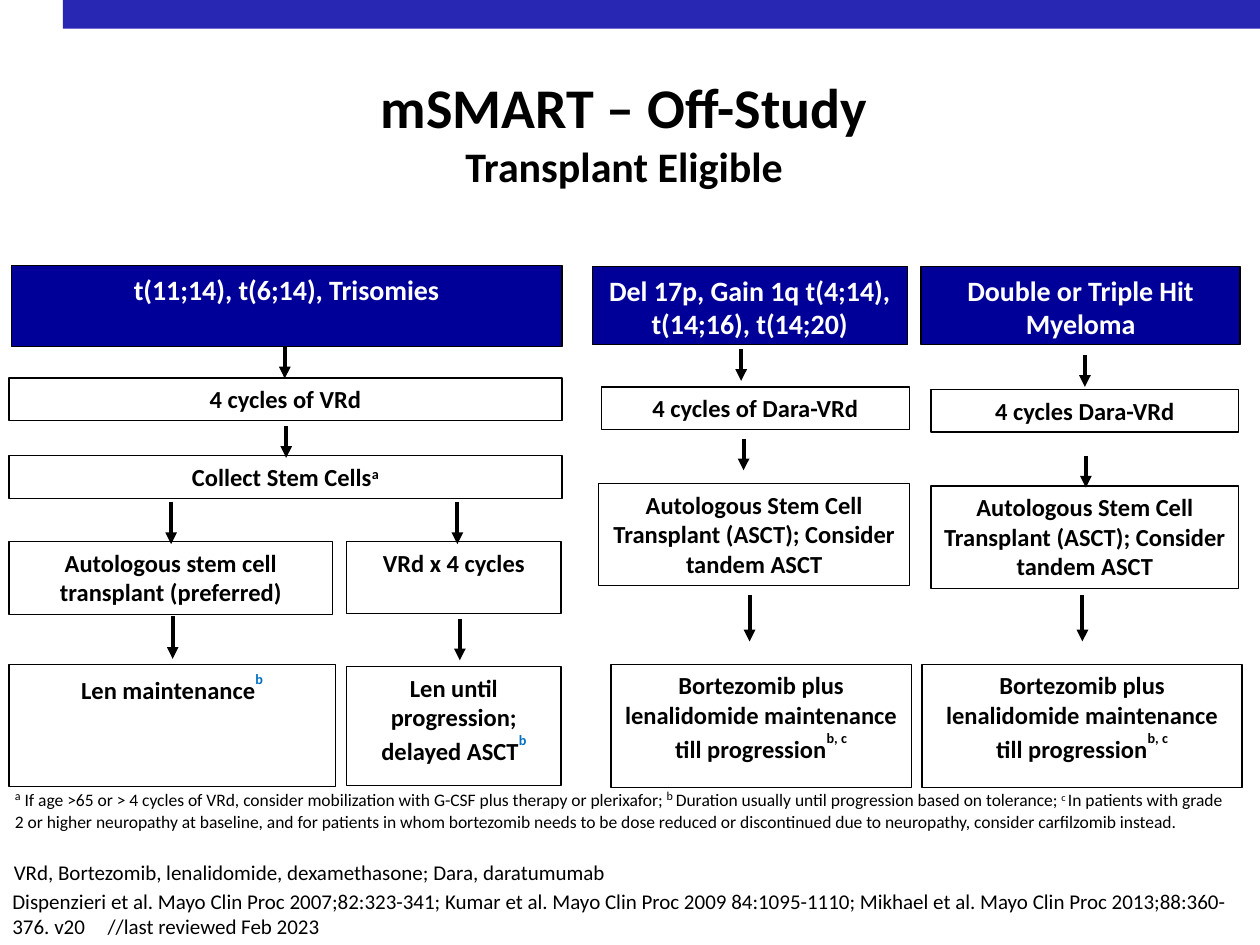
from dataclasses import dataclass
from typing import NamedTuple, Optional

from lxml.etree import SubElement
from pptx import Presentation
from pptx.dml.color import RGBColor
from pptx.enum.shapes import MSO_CONNECTOR, MSO_SHAPE
from pptx.enum.text import MSO_ANCHOR, MSO_AUTO_SIZE, PP_ALIGN
from pptx.oxml.ns import qn
from pptx.util import Cm, Pt

COLORS = {"bar": "2727B3", "header": "000099", "white": "FFFFFF",
          "black": "000000", "note": "0070C0"}


class Run(NamedTuple):
    text: str
    size: Optional[int] = None
    rise: int = 0  # superscript, percent
    color: Optional[str] = None


@dataclass
class Box:
    x: float
    y: float
    w: float
    h: float
    runs: list
    header: bool = False


class Arrow(NamedTuple):
    x: float
    y: float
    length: float


class Note(NamedTuple):
    x: float
    y: float
    w: float
    h: float
    runs: list
    spacing: float = 1.0


ASCT = [Run("Autologous Stem Cell Transplant (ASCT); Consider tandem ASCT")]
MAINTENANCE = [Run("Bortezomib plus lenalidomide maintenance till progression"),
               Run("b, c", rise=60)]
NOTE_B = Run("b", rise=60, color="note")

BOXES = [
    # standard risk
    Box(0.23, 5.36, 11.1, 1.63, [Run("t(11;14), t(6;14), Trisomies")], True),
    Box(0.18, 7.62, 11.15, 0.86, [Run("4 cycles of VRd")]),
    Box(0.18, 9.19, 11.15, 0.86, [Run("Collect Stem Cells"), Run("a", rise=30)]),
    Box(0.18, 10.92, 6.53, 1.47, [Run("Autologous stem cell transplant (preferred)")]),
    Box(6.99, 10.92, 4.32, 1.45, [Run("VRd x 4 cycles")]),
    Box(0.18, 13.39, 6.58, 2.46, [Run("Len maintenance"), NOTE_B]),
    Box(6.99, 13.44, 4.32, 2.39, [Run("Len until progression; delayed ASCT"), NOTE_B]),
    # high risk
    Box(11.94, 5.38, 6.35, 1.57,
        [Run("Del 17p, Gain 1q t(4;14), t(14;16), t(14;20)")], True),
    Box(12.12, 7.8, 6.22, 0.86, [Run("4 cycles of Dara-VRd")]),
    Box(12.07, 9.75, 6.27, 2.06, ASCT),
    Box(12.32, 13.39, 6.05, 2.49, MAINTENANCE),
    # double or triple hit
    Box(18.57, 5.38, 6.43, 1.57, [Run("Double or Triple Hit Myeloma")], True),
    Box(18.77, 7.85, 6.2, 0.86, [Run("4 cycles Dara-VRd")]),
    Box(18.77, 9.8, 6.2, 2.06, ASCT),
    Box(18.59, 13.39, 6.45, 2.49, MAINTENANCE),
]

ARROWS = [
    Arrow(5.74, 6.99, 0.64), Arrow(5.77, 8.59, 0.64),
    Arrow(3.45, 10.11, 0.86), Arrow(9.22, 10.11, 0.86),
    Arrow(3.48, 12.42, 0.86), Arrow(9.27, 12.47, 0.84),
    Arrow(14.94, 7.04, 0.64), Arrow(14.99, 8.84, 0.64), Arrow(15.11, 11.99, 0.94),
    Arrow(21.87, 7.16, 0.64), Arrow(21.89, 9.19, 0.64), Arrow(21.82, 11.99, 0.94),
]

NOTES = [
    Note(0.05, 15.72, 24.97, 1.63, [
        Run("a", 12, 30),
        Run(" If age >65 or > 4 cycles of VRd, consider mobilization with "
            "G-CSF plus therapy or plerixafor; ", 10),
        Run("b ", 12, 30),
        Run("Duration usually until progression based on tolerance; ", 10),
        Run("c ", 10, 30),
        Run("In patients with grade 2 or higher neuropathy at baseline, and for "
            "patients in whom bortezomib needs to be dose reduced or discontinued "
            "due to neuropathy, consider carfilzomib instead.", 10)]),
    Note(0.03, 17.25, 24.33, 0.71, [
        Run("VRd, Bortezomib, lenalidomide, dexamethasone; Dara, daratumumab")], 0.9),
    Note(0, 17.78, 25.4, 1.3, [
        Run("Dispenzieri et al. Mayo Clin Proc 2007;82:323-341; Kumar et al. "
            "Mayo Clin Proc 2009 84:1095-1110; Mikhael et al. Mayo Clin Proc "
            "2013;88:360-376. v20\t//last reviewed Feb 2023")]),
]


def rgb(name: str) -> RGBColor:
    return RGBColor.from_string(COLORS[name])


def set_all(target, values: dict) -> None:
    for name, value in values.items():
        setattr(target, name, value)


def write(p, runs: list, size: int, color: str = "black", bold: bool = True) -> None:
    for run in runs:
        r = p.add_run()
        r.text = run.text
        set_all(r.font, {"name": "Calibri", "size": Pt(run.size or size), "bold": bold})
        r.font.color.rgb = rgb(run.color or color)
        if run.rise:
            r._r.get_or_add_rPr().set("baseline", str(run.rise * 1000))


def add_rect(s, x: float, y: float, w: float, h: float, fill: str):
    sp = s.shapes.add_shape(MSO_SHAPE.RECTANGLE, Cm(x), Cm(y), Cm(w), Cm(h))
    sp.shadow.inherit = False
    sp.fill.solid()
    sp.fill.fore_color.rgb = rgb(fill)
    return sp


def add_box(s, box: Box) -> None:
    sp = add_rect(s, box.x, box.y, box.w, box.h, "header" if box.header else "white")
    sp.line.color.rgb = rgb("black")
    sp.line.width = Pt(0.75)
    tf = sp.text_frame
    set_all(tf, {"word_wrap": True, "vertical_anchor": MSO_ANCHOR.TOP})
    p = tf.paragraphs[0]
    p.alignment = PP_ALIGN.CENTER
    if box.header:
        write(p, box.runs, 16, "white")
    else:
        write(p, box.runs, 14)


def add_arrow(s, arrow: Arrow) -> None:
    cx = s.shapes.add_connector(MSO_CONNECTOR.STRAIGHT, Cm(arrow.x), Cm(arrow.y),
                                Cm(arrow.x), Cm(arrow.y + arrow.length))
    cx.line.color.rgb = rgb("black")
    cx.line.width = Pt(2.25)
    SubElement(cx.line._get_or_add_ln(), qn("a:tailEnd"), type="triangle")
    SubElement(cx._element.spPr, qn("a:effectLst"))


def add_note(s, note: Note) -> None:
    tb = s.shapes.add_textbox(Cm(note.x), Cm(note.y), Cm(note.w), Cm(note.h))
    tb.text_frame.word_wrap = True
    p = tb.text_frame.paragraphs[0]
    p.line_spacing = note.spacing
    if any("\t" in run.text for run in note.runs):
        tabs = SubElement(p._p.get_or_add_pPr(), qn("a:tabLst"))
        SubElement(tabs, qn("a:tab"), pos=str(Cm(1.92)), algn="l")
    write(p, note.runs, 12, bold=False)


def set_title(s) -> None:
    sp = s.shapes.title
    set_all(sp, {"left": Cm(7.29), "top": Cm(1.7), "width": Cm(10.59), "height": Cm(1.91)})
    tf = sp.text_frame
    set_all(tf, {"word_wrap": False, "auto_size": MSO_AUTO_SIZE.NONE,
                 "vertical_anchor": MSO_ANCHOR.MIDDLE, "margin_left": 0,
                 "margin_right": 0, "margin_top": 0, "margin_bottom": 0})
    for p, text, size in ((tf.paragraphs[0], "mSMART – Off-Study", 32),
                          (tf.add_paragraph(), "Transplant Eligible", 24)):
        p.alignment = PP_ALIGN.CENTER
        write(p, [Run(text)], size)


def main() -> None:
    prs = Presentation()
    prs.slide_width, prs.slide_height = Cm(25.4), Cm(19.05)
    s = prs.slides.add_slide(prs.slide_layouts[5])
    set_title(s)
    add_rect(s, 1.27, 0, 24.13, 0.58, "bar").line.fill.background()
    for box in BOXES:
        add_box(s, box)
    for arrow in ARROWS:
        add_arrow(s, arrow)
    for note in NOTES:
        add_note(s, note)
    prs.save("out.pptx")


if __name__ == "__main__":
    main()
